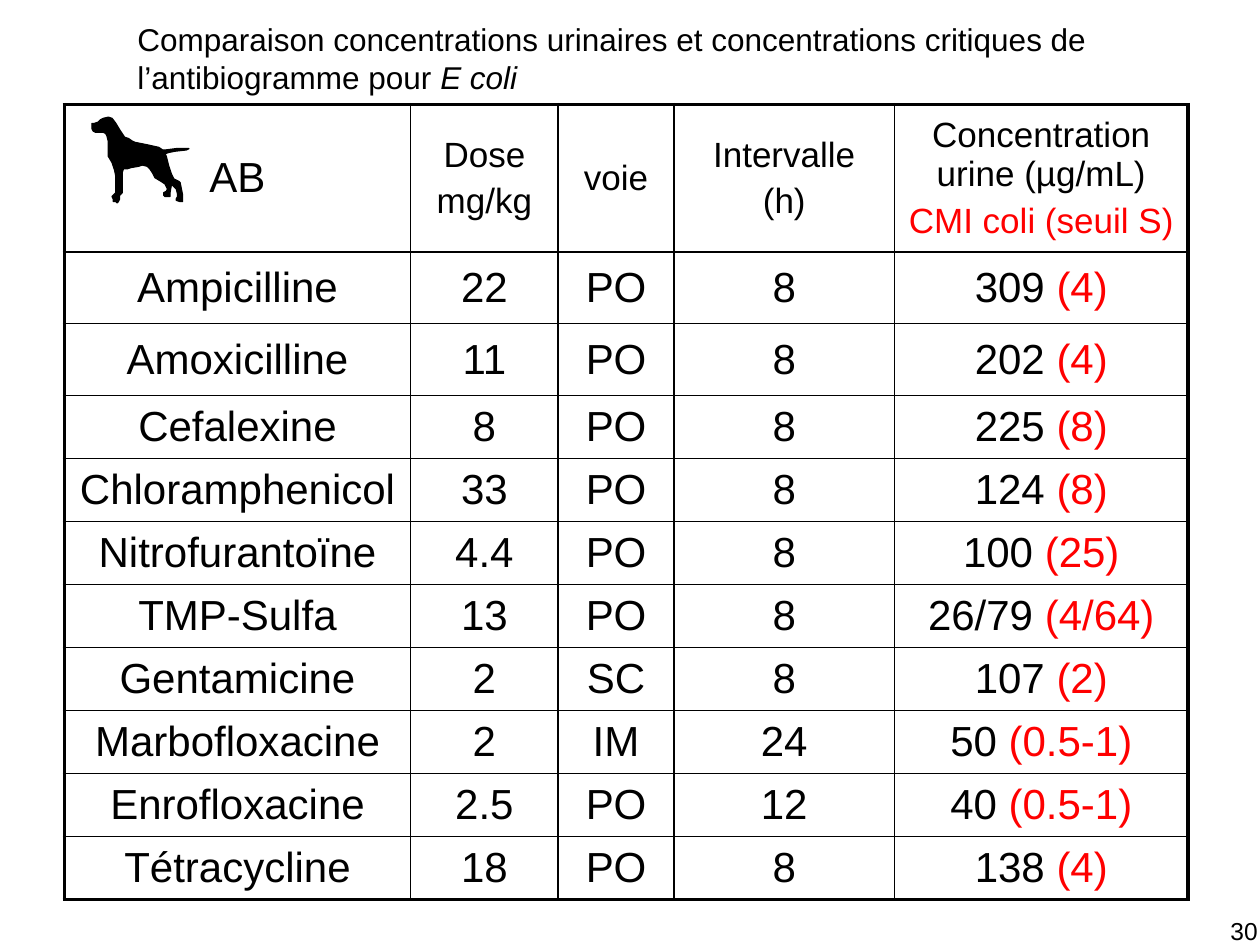
from lxml.etree import SubElement
from pptx import Presentation
from pptx.dml.color import RGBColor
from pptx.enum.text import MSO_ANCHOR, MSO_AUTO_SIZE, PP_ALIGN
from pptx.oxml.ns import qn
from pptx.util import Inches, Pt

BLACK = RGBColor(0, 0, 0)
RED = RGBColor(255, 0, 0)
FONT = "Arial"
THIN, THICK = Pt(1), Pt(2.25)

COLUMN_WIDTHS = [2.75, 1.17, 0.92, 1.75, 2.33]
ROW_HEIGHTS = [1.17] + [0.57] * 2 + [0.5] * 8

HEADERS = [
    ["AB"],
    ["Dose", "mg/kg"],
    ["voie"],
    ["Intervalle", "(h)"],
    ["Concentration urine (µg/mL)", "CMI coli (seuil S)"],
]
# antibiotic, dose, route, interval, urine concentration, MIC breakpoint
ANTIBIOTICS = [
    ("Ampicilline", "22", "PO", "8", "309", "(4)"),
    ("Amoxicilline", "11", "PO", "8", "202", "(4)"),
    ("Cefalexine", "8", "PO", "8", "225", "(8)"),
    ("Chloramphenicol", "33", "PO", "8", "124", "(8)"),
    ("Nitrofurantoïne", "4.4", "PO", "8", "100", "(25)"),
    ("TMP-Sulfa", "13", "PO", "8", "26/79", "(4/64)"),
    ("Gentamicine", "2", "SC", "8", "107", "(2)"),
    ("Marbofloxacine", "2", "IM", "24", "50", "(0.5-1)"),
    ("Enrofloxacine", "2.5", "PO", "12", "40", "(0.5-1)"),
    ("Tétracycline", "18", "PO", "8", "138", "(4)"),
]

# Outline of the dog, in hundredths of an inch
DOG = [
    (82, 105), (76, 105), (74, 104), (73, 102), (73, 98), (75, 98), (78, 97),
    (80, 95), (82, 94), (86, 93), (89, 94), (92, 98), (95, 103), (99, 109),
    (102, 110), (105, 112), (107, 113), (117, 115), (126, 117), (129, 119),
    (132, 119), (140, 118), (150, 118), (148, 119), (139, 120), (134, 121),
    (131, 122), (132, 124), (134, 132), (136, 138), (138, 142), (142, 144),
    (143, 145), (144, 150), (145, 155), (145, 160), (143, 160), (140, 159),
    (140, 158), (141, 156), (141, 154), (140, 150), (138, 148), (136, 146),
    (136, 147), (135, 153), (135, 156), (133, 156), (131, 156), (130, 155),
    (130, 153), (132, 152), (133, 150), (131, 146), (128, 144), (123, 141),
    (121, 137), (119, 134), (117, 132), (113, 131), (110, 132), (104, 133),
    (101, 134), (98, 134), (97, 137), (97, 139), (97, 149), (97, 153),
    (95, 155), (95, 158), (94, 160), (93, 161), (92, 160), (90, 160),
    (90, 158), (89, 156), (92, 153), (92, 151), (92, 140), (91, 135),
    (89, 129), (86, 124), (86, 120), (86, 112), (85, 108), (84, 106),
]


def style_font(paragraph, size, color=BLACK):
    font = paragraph.font
    font.name, font.size, font.color.rgb = FONT, Pt(size), color


def set_borders(cell, **widths):
    properties = cell._tc.get_or_add_tcPr()
    for side in "LRTB":
        line = SubElement(properties, qn(f"a:ln{side}"), w=str(widths[side]))
        fill = SubElement(line, qn("a:solidFill"))
        SubElement(fill, qn("a:srgbClr"), val=str(BLACK))


def write_cell(cell, lines, size):
    cell.vertical_anchor = MSO_ANCHOR.MIDDLE
    frame = cell.text_frame
    for index, line in enumerate(lines):
        paragraph = frame.add_paragraph() if index else frame.paragraphs[0]
        paragraph.text = line
        paragraph.alignment = PP_ALIGN.CENTER
        if index:
            paragraph.space_before = Pt(size * 0.2)
        style_font(paragraph, size)


def add_title(slide):
    title = slide.shapes.title
    title.left, title.top = Inches(0.99), Inches(0.11)
    title.width, title.height = Inches(7.77), Inches(0.7)
    frame = title.text_frame
    frame.auto_size = MSO_AUTO_SIZE.NONE
    frame.vertical_anchor = MSO_ANCHOR.TOP
    paragraph = frame.paragraphs[0]
    paragraph.text = (
        "Comparaison concentrations urinaires et concentrations critiques "
        "de l’antibiogramme pour "
    )
    species = paragraph.add_run()
    species.text = "E coli"
    species.font.italic = True
    paragraph.alignment = PP_ALIGN.LEFT
    style_font(paragraph, 18)


def add_antibiotic_table(slide):
    table = slide.shapes.add_table(
        len(ROW_HEIGHTS), len(COLUMN_WIDTHS), Inches(0.51), Inches(0.83),
        Inches(sum(COLUMN_WIDTHS)), Inches(sum(ROW_HEIGHTS)),
    ).table
    table.first_row = table.horz_banding = False
    for column, width in zip(table.columns, COLUMN_WIDTHS):
        column.width = Inches(width)
    for row, height in zip(table.rows, ROW_HEIGHTS):
        row.height = Inches(height)

    last_row, last_column = len(ROW_HEIGHTS) - 1, len(COLUMN_WIDTHS) - 1
    for r in range(last_row + 1):
        for c in range(last_column + 1):
            cell = table.cell(r, c)
            set_borders(
                cell,
                L=THICK if c == 0 else THIN,
                R=THICK if c == last_column else THIN,
                T=THICK if r == 0 else THIN,
                B=THICK if r == last_row else THIN,
            )
            cell.fill.background()

    for c, lines in enumerate(HEADERS):
        write_cell(table.cell(0, c), lines, 20 if c else 24)
    style_font(table.cell(0, last_column).text_frame.paragraphs[1], 20, RED)

    for r, (*values, breakpoint_text) in enumerate(ANTIBIOTICS, start=1):
        for c, value in enumerate(values):
            write_cell(table.cell(r, c), [value], 24)
        concentration = table.cell(r, last_column).text_frame.paragraphs[0]
        concentration.runs[0].text += " "
        threshold = concentration.add_run()
        threshold.text = breakpoint_text
        threshold.font.color.rgb = RED


def add_dog(slide):
    builder = slide.shapes.build_freeform(*DOG[0], scale=Inches(0.01))
    builder.add_line_segments(DOG[1:], close=True)
    dog = builder.convert_to_shape()
    dog.shadow.inherit = False
    dog.fill.solid()
    dog.fill.fore_color.rgb = BLACK
    dog.line.color.rgb = BLACK
    dog.line.width = Pt(0.75)


def add_page_number(slide):
    box = slide.shapes.add_textbox(
        Inches(7.74), Inches(7.22), Inches(2.34), Inches(0.41))
    box.text_frame.word_wrap = True
    paragraph = box.text_frame.paragraphs[0]
    paragraph.text = "30"
    paragraph.alignment = PP_ALIGN.RIGHT
    style_font(paragraph, 14)


def main():
    presentation = Presentation()
    presentation.slide_width, presentation.slide_height = Inches(10), Inches(7.5)
    slide = presentation.slides.add_slide(presentation.slide_layouts[5])
    add_title(slide)
    add_antibiotic_table(slide)
    add_dog(slide)
    add_page_number(slide)
    presentation.save("out.pptx")


if __name__ == "__main__":
    main()
